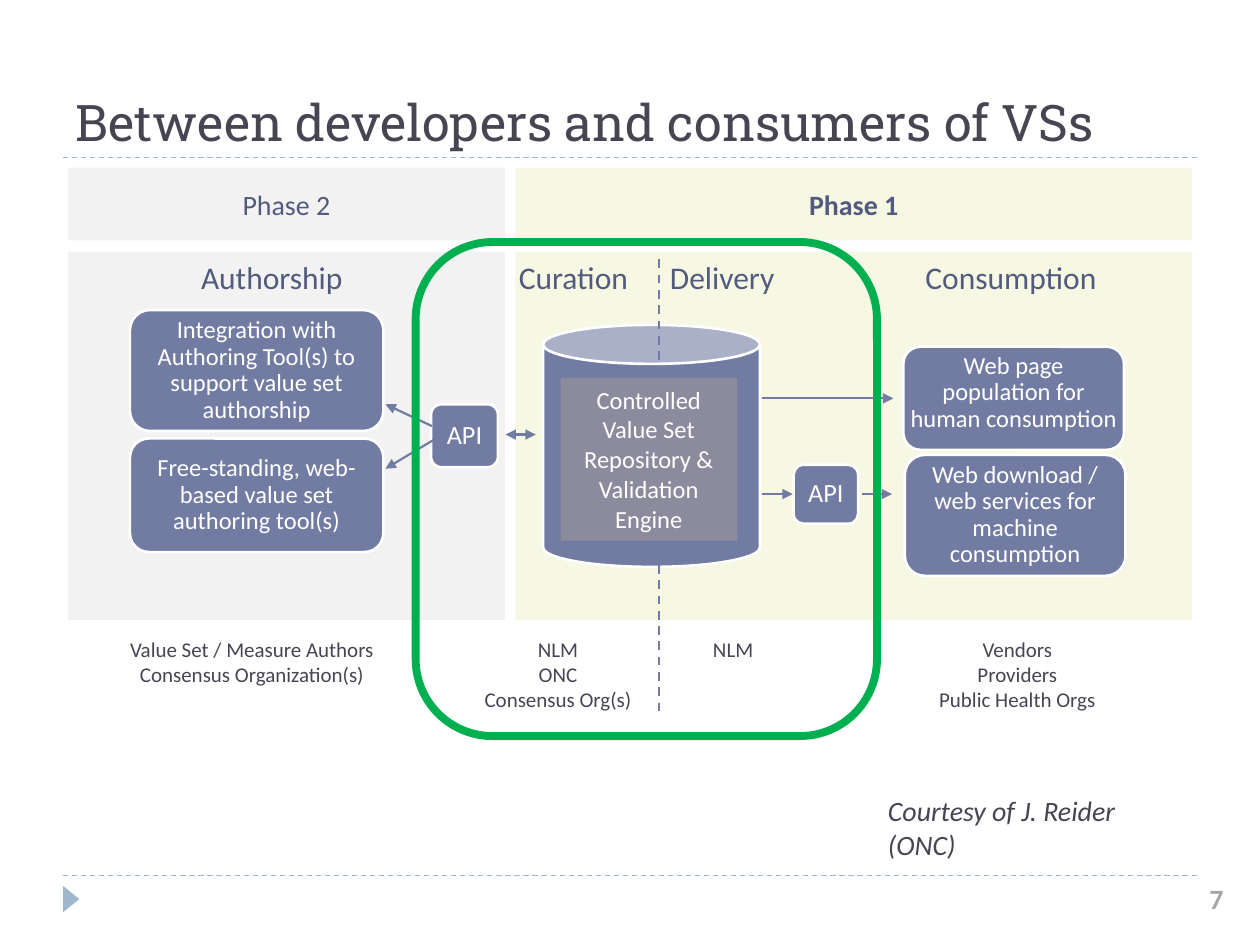
from dataclasses import dataclass
from typing import Optional

from lxml.etree import SubElement
from pptx import Presentation
from pptx.dml.color import RGBColor
from pptx.enum.dml import MSO_LINE
from pptx.enum.shapes import MSO_CONNECTOR, MSO_SHAPE
from pptx.enum.text import MSO_ANCHOR, PP_ALIGN
from pptx.oxml.ns import qn
from pptx.util import Cm, Pt

INK, NAVY, BLUE, PALE = "464653", "525B7E", "727CA3", "9FB8CD"
GREY, LIME, WHITE, GREEN = "F2F2F2", "F6F8E4", "FFFFFF", "00B050"
TOP, MID, END = MSO_ANCHOR.TOP, MSO_ANCHOR.MIDDLE, MSO_ANCHOR.BOTTOM
LEFT, RIGHT = (1.37, 8.81), (10.39, 13.64)
ROUND = MSO_SHAPE.ROUNDED_RECTANGLE


@dataclass
class Text:
    body: str
    size: float
    color: str = INK
    font: str = "Calibri"
    bold: bool = False
    slant: bool = False
    align: PP_ALIGN = PP_ALIGN.CENTER
    anchor: MSO_ANCHOR = TOP
    space: Optional[float] = None
    inset: Optional[float] = None


@dataclass
class Box:
    x: float
    y: float
    w: float
    h: float
    text: Optional[Text] = None
    kind: Optional[MSO_SHAPE] = None
    fill: Optional[str] = None
    line: Optional[str] = None
    width: float = 1.5
    turn: float = 0


@dataclass
class Line:
    x1: float
    y1: float
    x2: float
    y2: float
    color: str = BLUE
    width: float = 1.25
    dash: bool = False
    head: bool = False
    tail: bool = False


def paint(color: str) -> RGBColor:
    return RGBColor.from_string(color)


def write(frame, text: Text) -> None:
    frame.word_wrap = True
    frame.vertical_anchor = text.anchor
    if text.inset is not None:
        frame.margin_left = frame.margin_right = Cm(text.inset)
        frame.margin_top = frame.margin_bottom = Cm(text.inset)
    for i, row in enumerate(text.body.split("\n")):
        para = frame.add_paragraph() if i else frame.paragraphs[0]
        para.alignment = text.align
        if text.space:
            para.line_spacing = text.space
        run = para.add_run()
        run.text = row
        font = run.font
        font.name, font.size = text.font, Pt(text.size)
        font.bold, font.italic = text.bold, text.slant
        font.color.rgb = paint(text.color)


def draw(slide, box: Box) -> None:
    place = [Cm(n) for n in (box.x, box.y, box.w, box.h)]
    if box.kind is None:
        shape = slide.shapes.add_textbox(*place)
    else:
        shape = slide.shapes.add_shape(box.kind, *place)
        shape.shadow.inherit = False
        shape.rotation = box.turn
        if box.fill:
            shape.fill.solid()
            shape.fill.fore_color.rgb = paint(box.fill)
        else:
            shape.fill.background()
        if box.line:
            shape.line.color.rgb = paint(box.line)
            shape.line.width = Pt(box.width)
        else:
            shape.line.fill.background()
        if box.kind == MSO_SHAPE.CAN:
            shape.adjustments[0] = 0.18
    if box.text:
        write(shape.text_frame, box.text)


def link(slide, line: Line) -> None:
    ends = [Cm(n) for n in (line.x1, line.y1, line.x2, line.y2)]
    wire = slide.shapes.add_connector(MSO_CONNECTOR.STRAIGHT, *ends)
    wire.line.color.rgb = paint(line.color)
    wire.line.width = Pt(line.width)
    if line.dash:
        wire.line.dash_style = MSO_LINE.DASH
    stroke = wire.line._get_or_add_ln()
    for name, shown in (("a:headEnd", line.head), ("a:tailEnd", line.tail)):
        if shown:
            SubElement(stroke, qn(name), type="triangle")
    SubElement(wire._element.spPr, qn("a:effectLst"))


def panel(side: tuple, y: float, h: float, fill: str, text: Optional[Text] = None) -> Box:
    return Box(side[0], y, side[1], h, text, MSO_SHAPE.RECTANGLE, fill)


def card(x: float, y: float, w: float, h: float, body: str,
         size: float = 14, anchor: MSO_ANCHOR = MID) -> Box:
    text = Text(body, size, WHITE, anchor=anchor, space=0.9, inset=0.03)
    return Box(x, y, w, h, text, ROUND, BLUE, WHITE)


def label(mid: float, y: float, w: float, h: float, text: Text) -> Box:
    return Box(mid - w / 2, y, w, h, text)


def rule(y: float) -> Line:
    return Line(1.27, y, 24.13, y, PALE, 0.75, True)


HEADS = [(5.48, "Authorship"), (11.56, "Curation"),
         (14.56, "Delivery"), (20.38, "Consumption")]
NOTES = [
    (5.08, 5.72, "Value Set / Measure Authors\nConsensus Organization(s)"),
    (11.25, 3.66, "NLM\nONC\nConsensus Org(s)"),
    (14.78, 3.66, "NLM"),
    (20.51, 3.99, "Vendors\nProviders\nPublic Health Orgs"),
]
ITEMS = [
    rule(17.65),
    Box(24.13, 17.65, 1.27, 1.02,
        Text("7", 16, "A6A6A6", bold=True, align=PP_ALIGN.LEFT)),
    Box(1.17, 17.96, 0.53, 0.33, kind=MSO_SHAPE.ISOSCELES_TRIANGLE, fill=PALE, turn=90),
    rule(3.18),
    Box(1.27, 0.64, 22.86, 2.54,
        Text("Between developers and consumers of VSs", 28.8, font="Roboto Slab",
             align=PP_ALIGN.LEFT, anchor=END)),
    panel(RIGHT, 5.08, 7.42, LIME),
    panel(LEFT, 5.08, 7.42, GREY),
    panel(RIGHT, 3.38, 1.47, LIME, Text("Phase 1", 16, NAVY, bold=True, anchor=MID)),
    panel(LEFT, 3.38, 1.47, GREY, Text("Phase 2", 16, NAVY, anchor=MID)),
    *[label(mid, 5.08, 5, 1, Text(body, 18, NAVY)) for mid, body in HEADS],
    Box(10.95, 6.55, 4.37, 4.88, kind=MSO_SHAPE.CAN, fill=BLUE, line=WHITE),
    card(18.21, 6.99, 4.45, 2.08, "Web page population for human consumption", anchor=TOP),
    card(18.24, 9.17, 4.45, 2.44,
         "Web download / web services for machine consumption", anchor=TOP),
    card(2.62, 6.25, 5.11, 2.44,
         "Integration with Authoring Tool(s) to support value set authorship"),
    card(2.62, 8.84, 5.11, 2.29, "Free-standing, web-based value set authoring tool(s)"),
    card(8.69, 8.15, 1.35, 1.27, "API", 15),
    card(16, 9.37, 1.3, 1.19, "API", 15),
    Line(7.77, 8.15, 8.71, 8.59, head=True),
    Line(7.77, 9.45, 9.04, 8.69, head=True),
    Line(10.19, 8.76, 10.8, 8.76, head=True, tail=True),
    Line(15.37, 8.03, 18.01, 8.03, tail=True),
    Line(15.37, 9.96, 15.98, 9.96, tail=True),
    Line(17.37, 9.96, 17.98, 9.96, tail=True),
    Line(13.28, 5.23, 13.28, 14.4, dash=True),
    Box(11.3, 7.62, 3.56, 3.28,
        Text("Controlled Value Set Repository & Validation Engine", 14, WHITE, space=Pt(17)),
        MSO_SHAPE.RECTANGLE, "8B8B9D"),
    *[label(mid, 12.7, w, 2, Text(body, 12)) for mid, w, body in NOTES],
    Box(17.65, 15.88, 6.38, 1.6,
        Text("Courtesy of J. Reider (ONC)", 16, slant=True, align=PP_ALIGN.LEFT)),
    Box(8.38, 4.88, 9.3, 9.96, kind=ROUND, line=GREEN, width=4.5),
]


def main() -> None:
    deck = Presentation()
    deck.slide_width, deck.slide_height = Cm(25.4), Cm(19.05)
    slide = deck.slides.add_slide(deck.slide_layouts[6])
    for item in ITEMS:
        if isinstance(item, Line):
            link(slide, item)
        else:
            draw(slide, item)
    deck.save("out.pptx")


if __name__ == "__main__":
    main()
